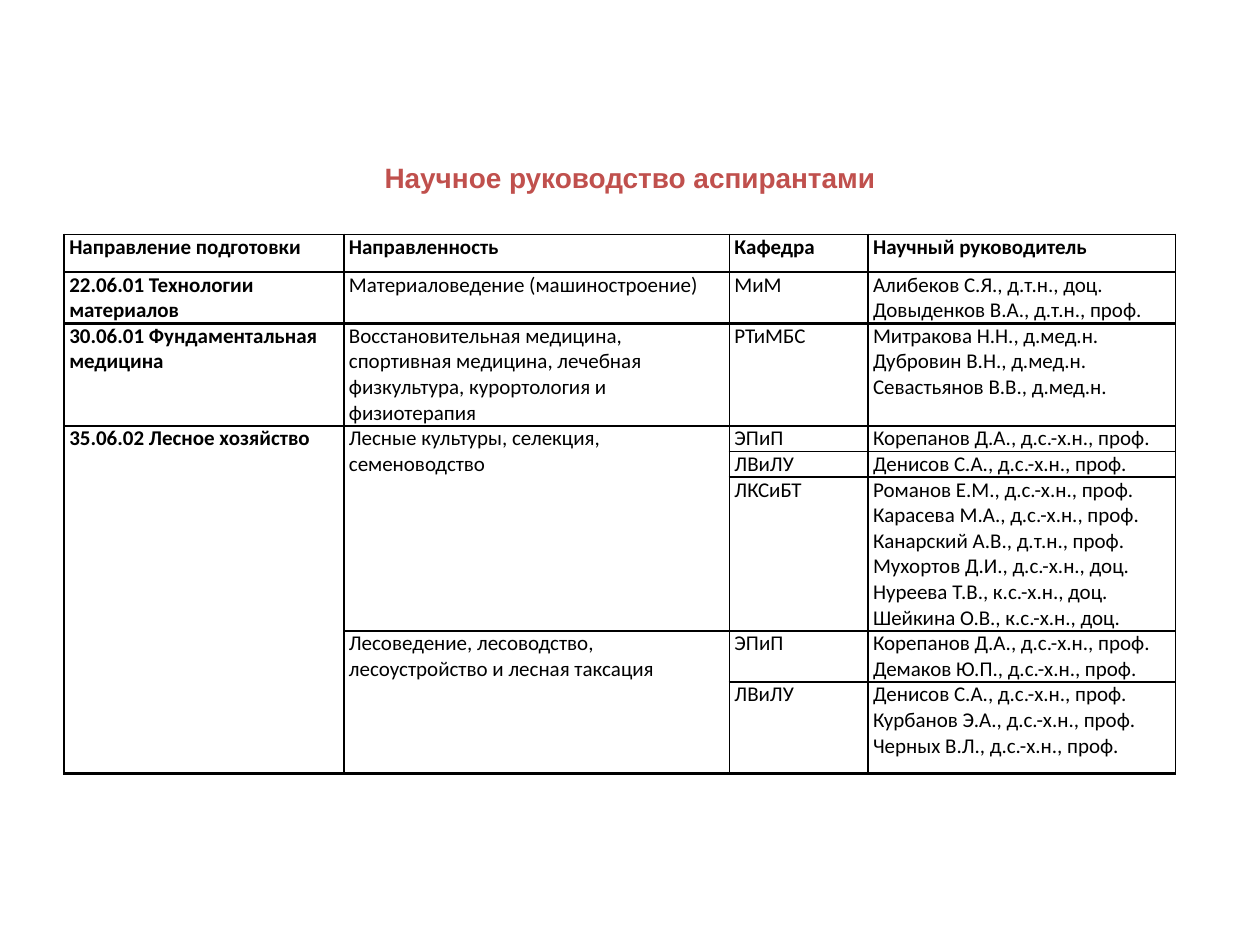
from lxml.etree import SubElement
from pptx import Presentation
from pptx.dml.color import RGBColor
from pptx.enum.text import MSO_ANCHOR as Anchor, PP_ALIGN as Align
from pptx.oxml.ns import qn
from pptx.util import Inches, Pt

BLACK = RGBColor(0x00, 0x00, 0x00)
RED = RGBColor(0xC0, 0x50, 0x4D)

WIDTHS = [0.222, 0.306, 0.11, 0.244]
HEIGHTS = [0.04, 0.052, 0.105, 0.027, 0.027, 0.157, 0.052, 0.097]
SPANS = [(3, 0, 7), (3, 1, 5), (6, 1, 7)]
HEAVY_TOPS = {2, 3, 6, 8}
HEAVY_BELOW = {1, 2, 5, 7}
ROWS = [
    ["Направление подготовки", "Направленность", "Кафедра", "Научный руководитель"],
    ["22.06.01 Технологии материалов", "Материаловедение (машиностроение)", "МиМ",
     "Алибеков С.Я., д.т.н., доц.\nДовыденков В.А., д.т.н., проф."],
    ["30.06.01 Фундаментальная медицина",
     "Восстановительная медицина, спортивная медицина, лечебная физкультура, "
     "курортология и физиотерапия", "РТиМБС",
     "Митракова Н.Н., д.мед.н.\nДубровин В.Н., д.мед.н.\nСевастьянов В.В., д.мед.н."],
    ["35.06.02 Лесное хозяйство", "Лесные культуры, селекция, семеноводство", "ЭПиП",
     "Корепанов Д.А., д.с.-х.н., проф."],
    ["", "", "ЛВиЛУ", "Денисов С.А., д.с.-х.н., проф."],
    ["", "", "ЛКСиБТ",
     "Романов Е.М., д.с.-х.н., проф.\nКарасева М.А., д.с.-х.н., проф.\n"
     "Канарский А.В., д.т.н., проф.\nМухортов Д.И., д.с.-х.н., доц.\n"
     "Нуреева Т.В., к.с.-х.н., доц.\nШейкина О.В., к.с.-х.н., доц."],
    ["", "Лесоведение, лесоводство, лесоустройство и лесная таксация", "ЭПиП",
     "Корепанов Д.А., д.с.-х.н., проф.\nДемаков Ю.П., д.с.-х.н., проф."],
    ["", "", "ЛВиЛУ",
     "Денисов С.А., д.с.-х.н., проф.\nКурбанов Э.А., д.с.-х.н., проф.\n"
     "Черных В.Л., д.с.-х.н., проф."],
]


class Deck:
    """Holds the style and the current slide; lengths are shares of the slide."""

    def __init__(self):
        self.prs = Presentation()
        self.prs.slide_width, self.prs.slide_height = Inches(10), Inches(7.5)
        self.s = self.prs.slides.add_slide(self.prs.slide_layouts[6])
        self.title_font = {"name": "Arial", "size": Pt(16), "bold": True}
        self.cell_font = {"name": "Calibri", "size": Pt(12)}
        self.margins = {"margin_left": Inches(0.04), "margin_right": Inches(0.04),
                        "margin_top": 0, "margin_bottom": 0}

    def x(self, share):
        return int(self.prs.slide_width * share)

    def y(self, share):
        return int(self.prs.slide_height * share)

    def style(self, p, color, **values):
        for r in p.runs:
            for key, value in values.items():
                setattr(r.font, key, value)
            r.font.color.rgb = color

    def title(self, text, top, height):
        sp = self.s.shapes.add_textbox(0, self.y(top), self.x(1), self.y(height))
        tf = sp.text_frame
        tf.word_wrap, tf.vertical_anchor = True, Anchor.MIDDLE
        p = tf.paragraphs[0]
        p.text, p.alignment, p.line_spacing = text, Align.CENTER, 1.15
        self.style(p, RED, **self.title_font)

    def border(self, cell, **points):
        for side, width in points.items():
            ln = SubElement(cell._tc.get_or_add_tcPr(), qn(f"a:ln{side}"), w=str(Pt(width)))
            fill = SubElement(ln, qn("a:solidFill"))
            SubElement(fill, qn("a:srgbClr"), val=str(BLACK))

    def table(self, left, top):
        sp = self.s.shapes.add_table(len(HEIGHTS), len(WIDTHS), self.x(left), self.y(top),
                                     self.x(sum(WIDTHS)), self.y(sum(HEIGHTS)))
        table = sp.table
        table.first_row = table.horz_banding = False
        for column, share in zip(table.columns, WIDTHS):
            column.width = self.x(share)
        for row, share in zip(table.rows, HEIGHTS):
            row.height = self.y(share)
        for first, col, last in SPANS:
            table.cell(first, col).merge(table.cell(last, col))
        for i, texts in enumerate(ROWS):
            for j, text in enumerate(texts):
                self.cell(table.cell(i, j), i, text, bold=i == 0 or j == 0)

    def cell(self, cell, row, text, bold):
        last = row + cell.span_height - 1 if cell.is_merge_origin else row
        self.border(cell, L=1, R=1, T=1.5 if row in HEAVY_TOPS else 1,
                    B=1.5 if last in HEAVY_BELOW else 1)
        cell.fill.background()
        for key, value in self.margins.items():
            setattr(cell, key, value)
        if text:
            cell.text = text
            for p in cell.text_frame.paragraphs:
                self.style(p, BLACK, bold=bold, **self.cell_font)


def main():
    deck = Deck()
    deck.table(0.051, 0.248)
    deck.title("Научное руководство аспирантами", 0.164, 0.041)
    deck.prs.save("out.pptx")


if __name__ == "__main__":
    main()
